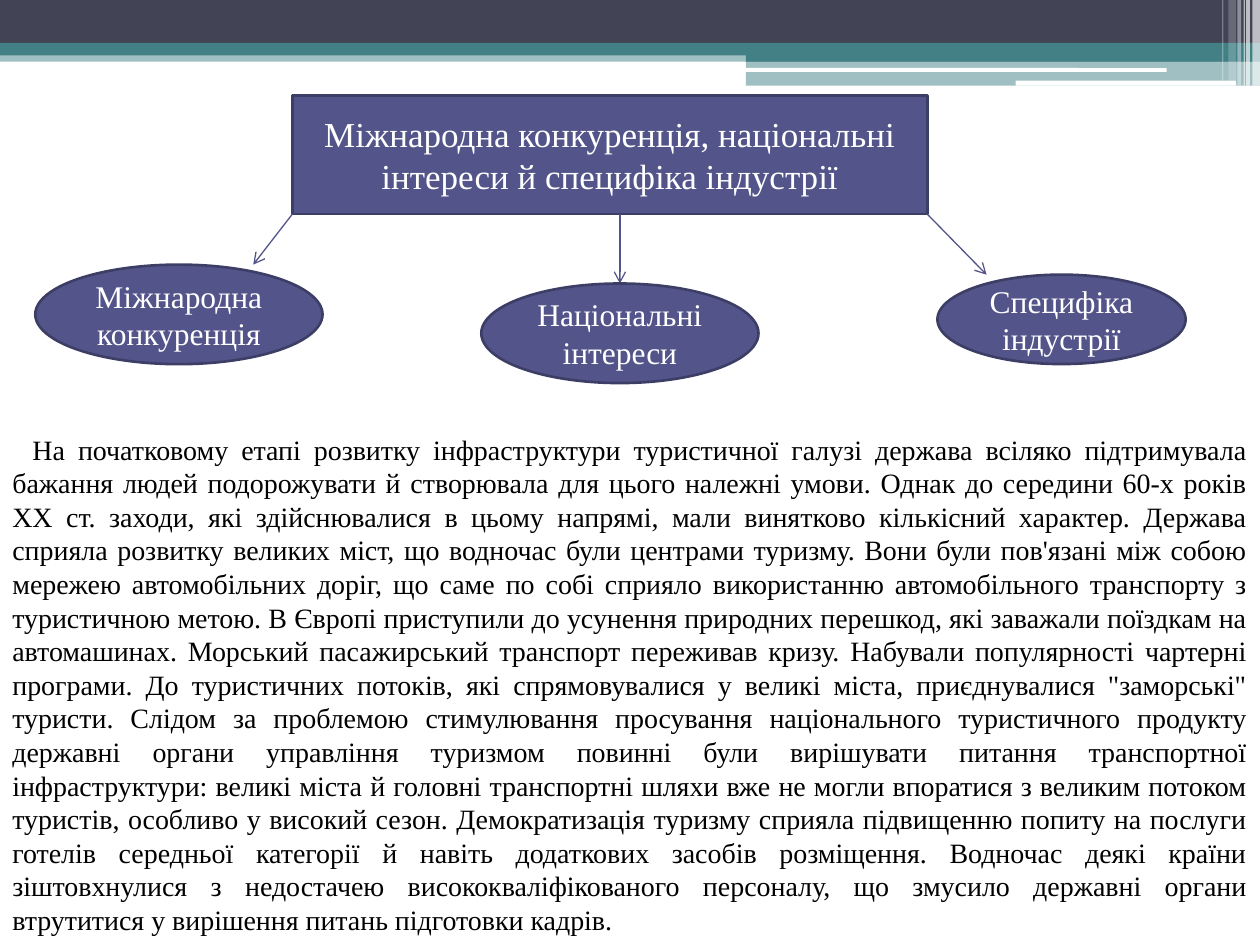
from typing import NamedTuple

from lxml.etree import SubElement
from pptx import Presentation
from pptx.dml.color import RGBColor
from pptx.enum.shapes import MSO_CONNECTOR, MSO_SHAPE as Preset
from pptx.enum.text import MSO_ANCHOR, PP_ALIGN
from pptx.oxml.ns import qn
from pptx.util import Inches, Pt

WHITE = RGBColor(0xFF, 0xFF, 0xFF)
BLACK = RGBColor(0x00, 0x00, 0x00)
SLATE = RGBColor(0x42, 0x44, 0x56)
TEAL = RGBColor(0x43, 0x80, 0x86)
INDIGO = RGBColor(0x53, 0x54, 0x8A)
INDIGO_DARK = RGBColor(0x3D, 0x3E, 0x66)
FONT = "Times New Roman"


class Band(NamedTuple):
    left: float
    top: float
    width: float
    height: float
    color: RGBColor
    opacity: int = 100
    preset: Preset = Preset.RECTANGLE


class Node(NamedTuple):
    left: float
    top: float
    width: float
    height: float
    text: str
    size: int = 18
    preset: Preset = Preset.OVAL


class Arrow(NamedTuple):
    start: tuple[float, float]
    end: tuple[float, float]


BANDS = [
    Band(0, 0.4, 10, 0.09, TEAL, 50),
    Band(0, 0, 10, 0.34, SLATE),
    Band(0, 0.34, 10, 0.1, TEAL),
    Band(5.92, 0.39, 4.08, 0.1, TEAL),
    Band(5.92, 0.48, 4.08, 0.2, TEAL, 50),
    Band(5.91, 0.54, 3.35, 0.03, WHITE, preset=Preset.ROUNDED_RECTANGLE),
    Band(8.06, 0.64, 1.75, 0.04, WHITE, preset=Preset.ROUNDED_RECTANGLE),
    Band(9.94, 0, 0.06, 0.68, WHITE, 65),
    Band(9.89, 0, 0.03, 0.68, WHITE, 65),
    Band(9.87, 0, 0.01, 0.68, WHITE, 60),
    Band(9.82, 0, 0.03, 0.68, WHITE, 40),
    Band(9.75, 0, 0.06, 0.64, WHITE, 20),
    Band(9.7, 0, 0.01, 0.64, WHITE, 30),
]

TOPIC = Node(2.32, 0.76, 5.04, 0.94,
             "Міжнародна конкуренція, національні інтереси й специфіка індустрії",
             20, Preset.RECTANGLE)
BRANCHES = [
    Node(0.28, 2.1, 2.28, 0.79, "Міжнародна конкуренція"),
    Node(3.82, 2.25, 2.2, 0.79, "Національні інтереси"),
    Node(7.44, 2.18, 1.97, 0.71, "Специфіка індустрії"),
]
TOPIC_BOTTOM = TOPIC.top + TOPIC.height
ARROWS = [
    Arrow((start_x, TOPIC_BOTTOM), (end_x, branch.top))
    for start_x, end_x, branch in zip(
        (TOPIC.left, 4.92, TOPIC.left + TOPIC.width), (2.01, 4.92, 7.83), BRANCHES)
]

BODY_SENTENCES = [
    "На початковому етапі розвитку інфраструктури туристичної галузі держава всіляко "
    "підтримувала бажання людей подорожувати й створювала для цього належні умови.",
    "Однак до середини 60-х років XX ст. заходи, які здійснювалися в цьому напрямі, "
    "мали винятково кількісний характер.",
    "Держава сприяла розвитку великих міст, що водночас були центрами туризму.",
    "Вони були пов'язані між собою мережею автомобільних доріг, що саме по собі "
    "сприяло використанню автомобільного транспорту з туристичною метою.",
    "В Європі приступили до усунення природних перешкод, які заважали поїздкам на "
    "автомашинах.",
    "Морський пасажирський транспорт переживав кризу.",
    "Набували популярності чартерні програми.",
    "До туристичних потоків, які спрямовувалися у великі міста, приєднувалися "
    "\"заморські\" туристи.",
    "Слідом за проблемою стимулювання просування національного туристичного продукту "
    "державні органи управління туризмом повинні були вирішувати питання транспортної "
    "інфраструктури: великі міста й головні транспортні шляхи вже не могли впоратися з "
    "великим потоком туристів, особливо у високий сезон.",
    "Демократизація туризму сприяла підвищенню попиту на послуги готелів середньої "
    "категорії й навіть додаткових засобів розміщення.",
    "Водночас деякі країни зіштовхнулися з недостачею висококваліфікованого персоналу, "
    "що змусило державні органи втрутитися у вирішення питань підготовки кадрів.",
]


def add_preset(page, item: Band | Node, color: RGBColor):
    shape = page.shapes.add_shape(
        item.preset, *map(Inches, (item.left, item.top, item.width, item.height)))
    shape.shadow.inherit = False
    shape.fill.solid()
    shape.fill.fore_color.rgb = color
    return shape


def write_text(shape, text: str, size: int, color: RGBColor, align: PP_ALIGN):
    frame = shape.text_frame
    frame.word_wrap = True
    frame.vertical_anchor = MSO_ANCHOR.MIDDLE
    para = frame.paragraphs[0]
    para.text = text
    para.alignment = align
    para.font.name = FONT
    para.font.size = Pt(size)
    para.font.color.rgb = color
    return para


def add_band(page, band: Band) -> None:
    shape = add_preset(page, band, band.color)
    shape.line.fill.background()
    if band.opacity < 100:
        color = shape._element.spPr.find(qn("a:solidFill"))[0]
        SubElement(color, qn("a:alpha"), val=str(band.opacity * 1000))


def add_node(page, node: Node) -> None:
    shape = add_preset(page, node, INDIGO)
    shape.line.color.rgb = INDIGO_DARK
    shape.line.width = Pt(1.5)
    write_text(shape, node.text, node.size, WHITE, PP_ALIGN.CENTER)


def add_arrow(page, arrow: Arrow) -> None:
    connector = page.shapes.add_connector(
        MSO_CONNECTOR.STRAIGHT, *map(Inches, arrow.start + arrow.end))
    connector.line.color.rgb = INDIGO
    connector.line.width = Pt(0.75)
    properties = connector._element.spPr
    SubElement(properties.find(qn("a:ln")), qn("a:tailEnd"), type="arrow")
    SubElement(properties, qn("a:effectLst"))


def add_body(page) -> None:
    box = page.shapes.add_textbox(Inches(0), Inches(3.36), Inches(10), Inches(4.14))
    para = write_text(box, " ".join(BODY_SENTENCES), 16, BLACK, PP_ALIGN.JUSTIFY)
    para._p.get_or_add_pPr().set("indent", str(Inches(0.16)))


def main() -> None:
    deck = Presentation()
    deck.slide_width, deck.slide_height = Inches(10), Inches(7.5)
    page = deck.slides.add_slide(deck.slide_layouts[6])
    for band in BANDS:
        add_band(page, band)
    add_body(page)
    add_node(page, TOPIC)
    for arrow in ARROWS:
        add_arrow(page, arrow)
    for branch in BRANCHES:
        add_node(page, branch)
    deck.save("out.pptx")


if __name__ == "__main__":
    main()
